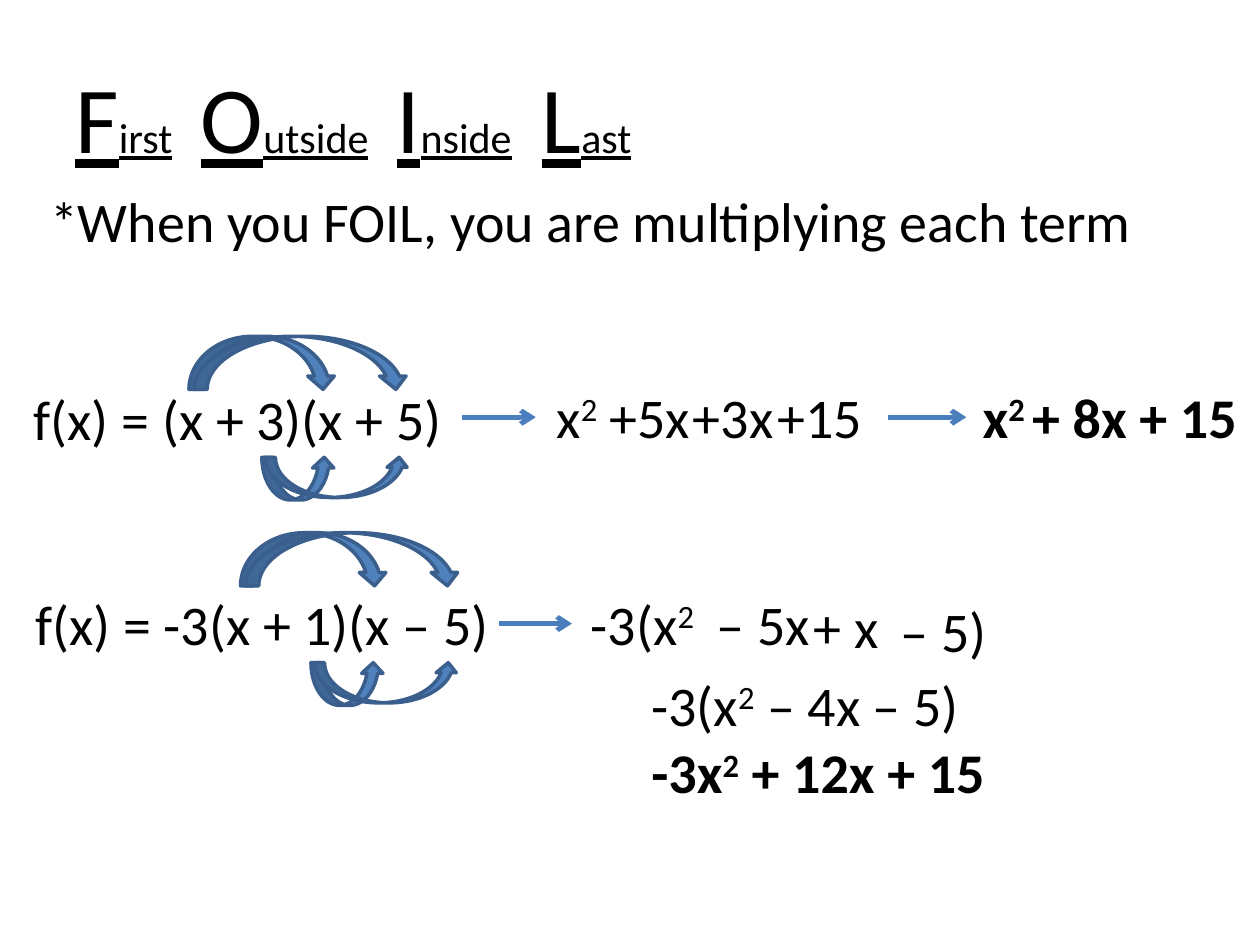
from lxml import etree
from pptx import Presentation
from pptx import util as u
from pptx.dml import color
from pptx.enum import shapes, text
from pptx.oxml import ns

COLORS = {"text": "000000", "fill": "4F81BD", "outline": "3A5F8C", "arrow": "4B7EBC"}

presentation = Presentation()
presentation.slide_width = u.Cm(25.4)
presentation.slide_height = u.Cm(19.05)
slide = presentation.slides.add_slide(presentation.slide_layouts[6])


def add_text(content, left, top, width, height=1.63, size=32, small=None,
             bold=False, underline=False, wrap=False):
    """Lines split at newlines; parts between ^ marks are small or superscript."""
    shape = slide.shapes.add_textbox(u.Cm(left), u.Cm(top), u.Cm(width), u.Cm(height))
    frame = shape.text_frame
    frame.word_wrap = wrap
    frame.vertical_anchor = text.MSO_ANCHOR.TOP
    for index, line in enumerate(content.split("\n")):
        paragraph = frame.add_paragraph() if index else frame.paragraphs[0]
        for position, part in enumerate(line.split("^")):
            if not part:
                continue
            run = paragraph.add_run()
            run.text = part
            font = run.font
            font.name = "Calibri"
            font.size = u.Pt(size)
            font.bold = bold
            font.underline = underline
            font.color.rgb = color.RGBColor.from_string(COLORS["text"])
            if position % 2 and small:
                font.size = u.Pt(small)
            elif position % 2:
                run._r.get_or_add_rPr().set("baseline", "30000")
    return shape


# Title, with tab stops between the four words
title = add_text("F^irst\t^O^utside\t^I^nside\t^L^ast", 1.27, 1.07, 12.2, 2.57,
                 size=54, small=24, underline=True, wrap=True)
properties = title.text_frame.paragraphs[0]._p.get_or_add_pPr()
tab_list = etree.SubElement(properties, ns.qn("a:tabLst"))
for stop in (2.53, 6.48, 9.4):
    etree.SubElement(tab_list, ns.qn("a:tab"), pos=str(u.Cm(stop)), algn="l")

add_text("*When you FOIL, you are multiplying each term", 0.76, 3.63, 22.56)

# Pieces of both worked examples: text, left, top, width
pieces = [
    ("f(x) = (x + 3)(x + 5)", 0.43, 7.63, 8.9),
    ("x^2^", 10.97, 7.59, 1.4),
    ("+5x", 12.04, 7.59, 2.16),
    ("+3x", 13.72, 7.59, 2.16),
    ("+15", 15.42, 7.59, 2.24),
    ("f(x) = -3(x + 1)(x – 5)", 0.46, 11.76, 9.78),
    ("-3(x^2^", 11.66, 11.76, 2.67),
    ("– 5x", 14.2, 11.76, 2.41),
    ("+ x", 16.15, 11.81, 1.83),
    ("– 5)", 17.91, 11.91, 2.26),
    ("-3(x^2^ – 4x – 5)", 12.88, 13.39, 7.32),
]
for content, left, top, width in pieces:
    add_text(content, left, top, width)

# Final answers
add_text("x^2 ^+ 8x + 15", 19.56, 7.59, 5.87, bold=True)
add_text("-3x^2^ + 12x + 15", 12.88, 14.75, 7.32, bold=True)

# Curved arrows: two above and two below each product
DOWN = shapes.MSO_SHAPE.CURVED_DOWN_ARROW
UP = shapes.MSO_SHAPE.CURVED_UP_ARROW
for down_left, down_top, up_left, up_top in ((3.81, 6.78, 5.28, 9.22),
                                             (4.85, 10.74, 6.27, 13.36)):
    for kind, left, top, width, height in (
        (DOWN, down_left, down_top, 2.97, 1.07),
        (UP, up_left, up_top, 1.47, 0.86),
        (DOWN, down_left + 0.1, down_top, 4.34, 1.07),
        (UP, up_left + 0.07, up_top, 2.9, 0.81),
    ):
        shape = slide.shapes.add_shape(kind, u.Cm(left), u.Cm(top), u.Cm(width), u.Cm(height))
        shape.shadow.inherit = False
        shape.fill.solid()
        shape.fill.fore_color.rgb = color.RGBColor.from_string(COLORS["fill"])
        shape.line.color.rgb = color.RGBColor.from_string(COLORS["outline"])
        shape.line.width = u.Pt(2)

# Straight arrows between the steps
for start, end, y in ((9.32, 10.8, 8.41), (17.91, 19.48, 8.41), (10.06, 11.53, 12.57)):
    arrow = slide.shapes.add_connector(shapes.MSO_CONNECTOR.STRAIGHT,
                                       u.Cm(start), u.Cm(y), u.Cm(end), u.Cm(y))
    arrow.line.color.rgb = color.RGBColor.from_string(COLORS["arrow"])
    arrow.line.width = u.Pt(2.75)
    etree.SubElement(arrow.line._get_or_add_ln(), ns.qn("a:tailEnd"), type="arrow")
    etree.SubElement(arrow._element.spPr, ns.qn("a:effectLst"))

presentation.save("out.pptx")
